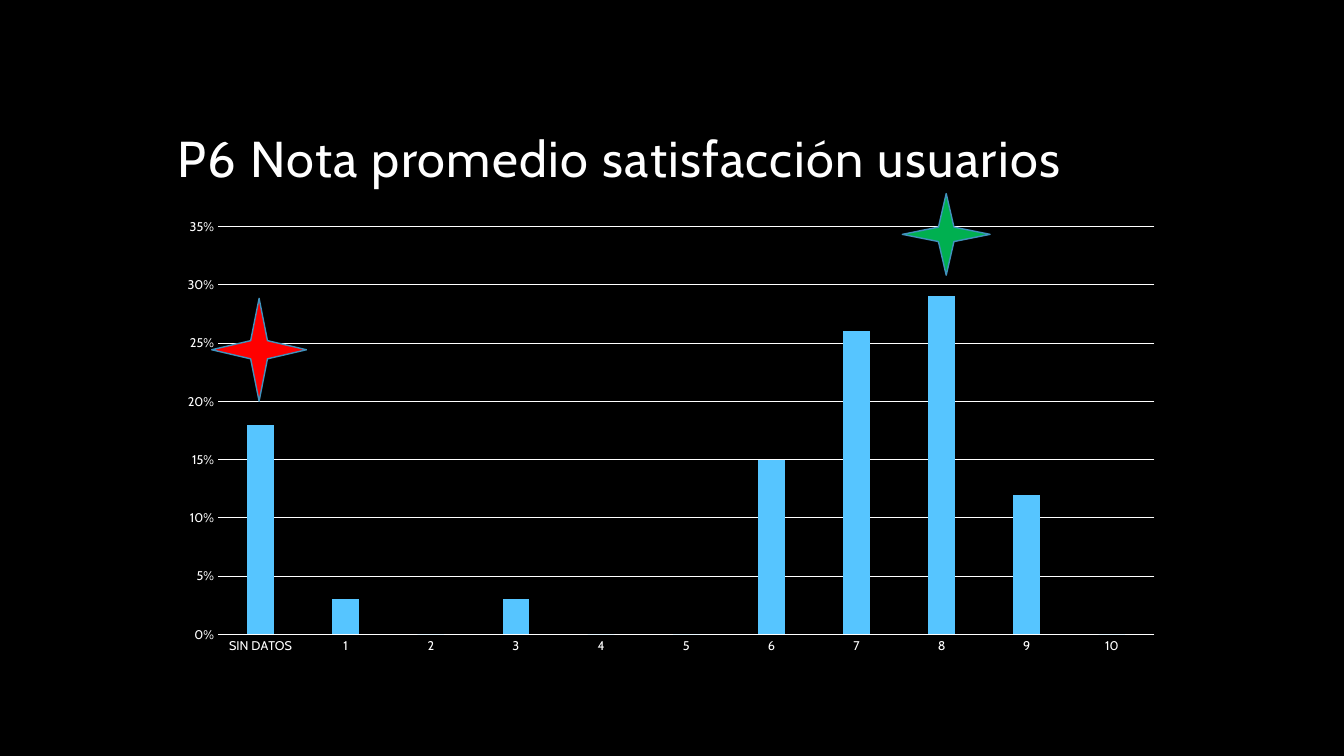
from dataclasses import dataclass

from pptx import Presentation
from pptx.chart.data import CategoryChartData
from pptx.dml.color import RGBColor
from pptx.enum.chart import XL_CHART_TYPE, XL_TICK_MARK
from pptx.enum.shapes import MSO_SHAPE
from pptx.enum.text import MSO_ANCHOR, PP_ALIGN
from pptx.util import Inches, Pt

COLUMN = XL_CHART_TYPE.COLUMN_CLUSTERED
NO_TICK = XL_TICK_MARK.NONE
STAR = MSO_SHAPE.STAR_4_POINT
BOTTOM = MSO_ANCHOR.BOTTOM
LEFT = PP_ALIGN.LEFT


@dataclass(frozen=True)
class Theme:
    font: str = "Cabin"
    back: str = "000000"
    text: str = "FFFFFF"
    bar: str = "56C5FF"
    edge: str = "4092BD"
    low: str = "FF0000"
    high: str = "00B050"
    title: float = 36
    chart: float = 10
    axis: float = 9
    rule: float = 0.75


THEME = Theme()

# Share of users who gave each grade
GRADES = ["SIN DATOS"] + [str(n) for n in range(1, 11)]
SHARES = [0.18, 0.03, 0, 0.03, 0, 0, 0.15, 0.26, 0.29, 0.12, 0]


def rgb(code):
    return RGBColor.from_string(code)


def place(shape, left, top, width, height):
    shape.left, shape.top = Inches(left), Inches(top)
    shape.width, shape.height = Inches(width), Inches(height)


def set_font(font, size):
    font.name, font.size, font.bold = THEME.font, Pt(size), False
    font.color.rgb = rgb(THEME.text)


def set_line(line, color, width):
    line.color.rgb = rgb(color)
    line.width = Pt(width)


def add_text(frame, text, size, anchor=BOTTOM, align=LEFT, lead=0.9, track=1):
    frame.word_wrap = True
    frame.vertical_anchor = anchor
    para = frame.paragraphs[0]
    para.alignment = align
    para.line_spacing = lead
    run = para.add_run()
    run.text = text
    set_font(run.font, size)
    # Letter spacing is stored in hundredths of a point
    run._r.get_or_add_rPr().set("spc", str(track * 100))


def set_axis(axis):
    axis.major_tick_mark = axis.minor_tick_mark = NO_TICK
    set_font(axis.tick_labels.font, THEME.axis)


def add_bars(slide, left, top, width, height):
    data = CategoryChartData(number_format="0%")
    data.categories = GRADES
    data.add_series("Series 1", SHARES)
    box = [Inches(n) for n in (left, top, width, height)]
    chart = slide.shapes.add_chart(COLUMN, *box, data).chart
    chart.has_legend = chart.has_title = False
    set_font(chart.font, THEME.chart)

    # Columns
    plot = chart.plots[0]
    plot.gap_width, plot.overlap = 219, -27
    plot.vary_by_categories = False
    fill = plot.series[0].format.fill
    fill.solid()
    fill.fore_color.rgb = rgb(THEME.bar)

    # Axes and grid
    grade, share = chart.category_axis, chart.value_axis
    set_axis(grade)
    set_line(grade.format.line, THEME.text, THEME.rule)
    set_axis(share)
    share.format.line.fill.background()
    share.minimum_scale, share.maximum_scale = 0, 0.35
    share.major_unit = 0.05
    share.tick_labels.number_format = "0%"
    share.tick_labels.number_format_is_linked = False
    share.has_major_gridlines = True
    set_line(share.major_gridlines.format.line, THEME.text, THEME.rule)


def add_star(slide, color, left, top, width, height):
    box = [Inches(n) for n in (left, top, width, height)]
    star = slide.shapes.add_shape(STAR, *box)
    star.shadow.inherit = False
    star.fill.solid()
    star.fill.fore_color.rgb = rgb(color)
    set_line(star.line, THEME.edge, 1)


def main():
    deck = Presentation()
    deck.slide_width, deck.slide_height = Inches(13.33), Inches(7.5)
    slide = deck.slides.add_slide(deck.slide_layouts[5])
    fill = slide.background.fill
    fill.solid()
    fill.fore_color.rgb = rgb(THEME.back)

    # Title
    title = slide.shapes.title
    place(title, 1.66, 0.42, 10, 1.5)
    add_text(title.text_frame, "P6 Nota promedio satisfacción usuarios",
             size=THEME.title)

    # Chart, with stars over the missing data and the top grade
    add_bars(slide, 1.66, 2.08, 9.99, 4.5)
    add_star(slide, THEME.low, 2.1, 2.96, 0.94, 1.02)
    add_star(slide, THEME.high, 8.95, 1.92, 0.87, 0.81)

    deck.save("out.pptx")


if __name__ == "__main__":
    main()
